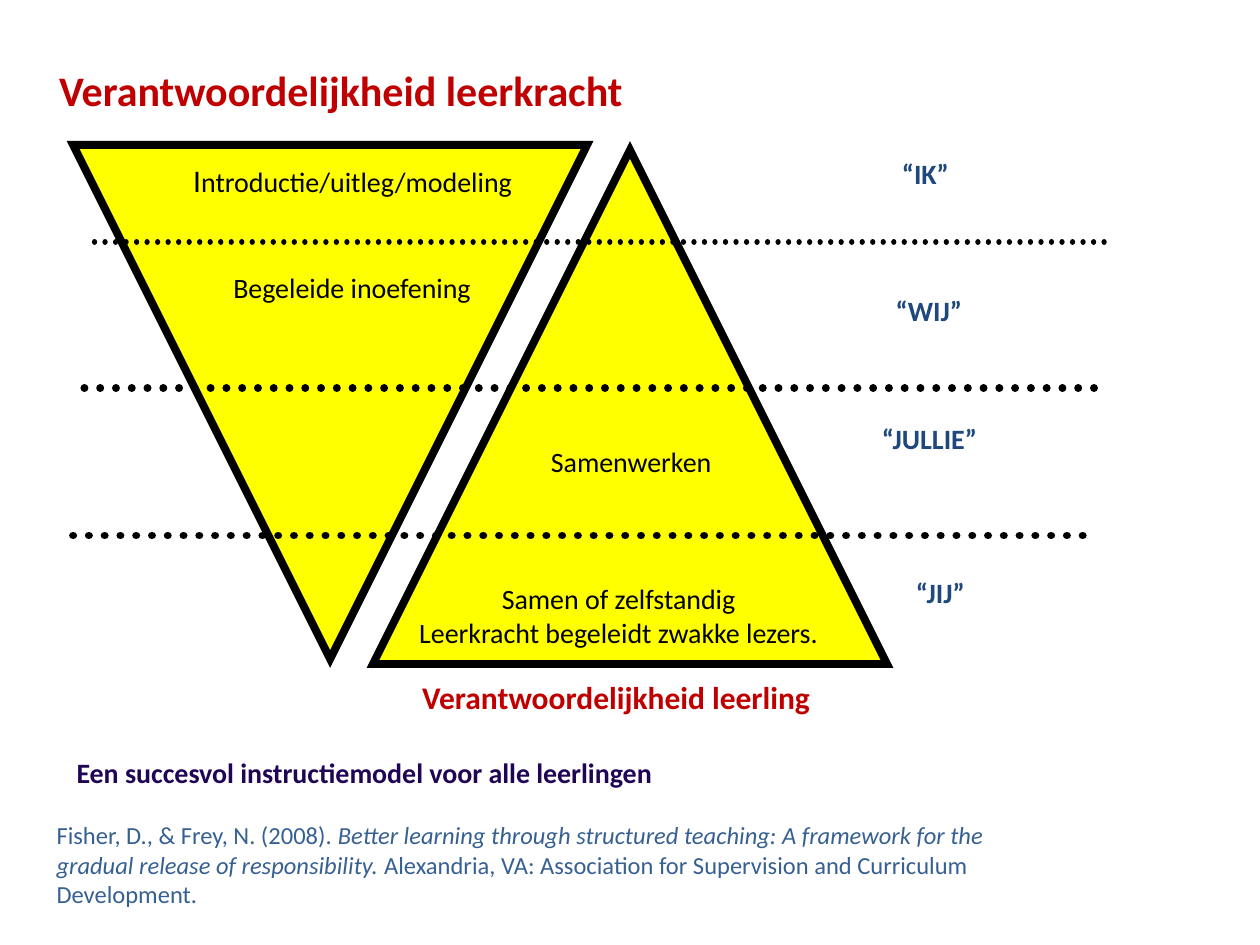
from dataclasses import dataclass

from lxml import etree
from pptx import Presentation
from pptx.dml.color import RGBColor
from pptx.enum.dml import MSO_LINE
from pptx.enum.shapes import MSO_CONNECTOR, MSO_SHAPE
from pptx.enum.text import MSO_AUTO_SIZE, PP_ALIGN
from pptx.oxml.ns import qn
from pptx.util import Inches, Pt

TRIANGLE = MSO_SHAPE.ISOSCELES_TRIANGLE
STRAIGHT = MSO_CONNECTOR.STRAIGHT
DOTTED = MSO_LINE.ROUND_DOT
LEFT, CENTER = PP_ALIGN.LEFT, PP_ALIGN.CENTER


@dataclass(frozen=True)
class Theme:
    font: str = "Calibri"
    black: str = "000000"
    yellow: str = "FFFF00"
    red: str = "C00000"
    blue: str = "1F497D"
    purple: str = "200555"
    citation: str = "376092"
    title_size: int = 24
    subtitle_size: int = 18
    body_size: int = 16
    citation_size: int = 14


THEME = Theme()

presentation = Presentation()
presentation.slide_width = Inches(10)
presentation.slide_height = Inches(7.5)
slide = presentation.slides.add_slide(presentation.slide_layouts[6])
shapes = slide.shapes


def color(value):
    return RGBColor.from_string(value)


def add_text(paragraphs, left, top, width, height, size=THEME.body_size,
             ink=THEME.black, bold=False, align=LEFT, wrap=True, indent=0.1):
    """Each paragraph is a list of (text, overrides) runs; overrides: size, italic."""
    box = shapes.add_textbox(Inches(left), Inches(top), Inches(width), Inches(height))
    frame = box.text_frame
    frame.word_wrap = wrap
    frame.auto_size = MSO_AUTO_SIZE.SHAPE_TO_FIT_TEXT
    frame.margin_left = Inches(indent)
    for index, runs in enumerate(paragraphs):
        paragraph = frame.add_paragraph() if index else frame.paragraphs[0]
        paragraph.alignment = align
        for text, overrides in runs:
            run = paragraph.add_run()
            run.text = text
            font = run.font
            font.name = THEME.font
            font.size = Pt(overrides.get("size", size))
            font.bold = bold
            font.italic = overrides.get("italic", False)
            font.color.rgb = color(ink)


# Student triangle points up, teacher triangle points down
for left, top, rotation in [(2.96, 1.19, 0), (0.58, 1.15, 180)]:
    triangle = shapes.add_shape(TRIANGLE, Inches(left), Inches(top),
                                Inches(4.08), Inches(4.08))
    triangle.rotation = rotation
    triangle.shadow.inherit = False
    triangle.fill.solid()
    triangle.fill.fore_color.rgb = color(THEME.yellow)
    triangle.line.color.rgb = color(THEME.black)
    triangle.line.width = Pt(4.5)
    outline = triangle.line._get_or_add_ln()
    etree.SubElement(outline, qn("a:miter")).set("lim", "800000")

# Dotted dividers between the four phases
for left, top, weight in [(0.75, 1.92, 3), (0.67, 3.08, 4.5), (0.58, 4.25, 4.5)]:
    divider = shapes.add_connector(STRAIGHT, Inches(left), Inches(top),
                                   Inches(left + 8.08), Inches(top))
    divider.line.color.rgb = color(THEME.black)
    divider.line.width = Pt(weight)
    divider.line.dash_style = DOTTED
    divider.line._get_or_add_ln().set("cap", "rnd")
    etree.SubElement(divider._element.spPr, qn("a:effectLst"))

# Headings
add_text([[("Verantwoordelijkheid leerkracht", {})]], 0.37, 0.46, 6.55, 0.5,
         size=THEME.title_size, ink=THEME.red, bold=True)
add_text([[("Verantwoordelijkheid leerling", {})]], 2.8, 5.33, 6.22, 0.4,
         size=THEME.subtitle_size, ink=THEME.red, bold=True, indent=0.55)

# Phases inside the triangles
add_text([[("I", {"size": THEME.subtitle_size}), ("ntroductie/uitleg/modeling", {})]],
         0.83, 1.23, 3.94, 0.51, align=CENTER)
add_text([[("Begeleide inoefening", {})]], 1.63, 2.1, 2.33, 0.64, align=CENTER)
add_text([[("Samenwerken", {})]], 4.11, 3.48, 1.8, 0.37, align=CENTER, wrap=False)
add_text([[("Samen of zelfstandig", {})], [("Leerkracht begeleidt zwakke lezers.", {})]],
         2.79, 4.57, 4.24, 0.64, align=CENTER, wrap=False)

# Who is at work in each phase
for label, left, top, width in [("“IK”", 7.06, 1.19, 0.58), ("“WIJ”", 7.01, 2.28, 0.89),
                                ("“JULLIE”", 6.9, 3.3, 0.97), ("“JIJ”", 7.17, 4.52, 0.6)]:
    add_text([[(label, {})]], left, top, width, 0.37,
             ink=THEME.blue, bold=True, wrap=False)

# Conclusion and citation
add_text([[("Een succesvol instructiemodel voor alle leerlingen", {})]],
         0.51, 5.95, 7.4, 0.37, ink=THEME.purple, bold=True)
add_text([[("Fisher, D., & Frey, N. (2008). ", {}),
           ("Better learning through structured teaching: A framework for the "
            "gradual release of responsibility. ", {"italic": True}),
           ("Alexandria, VA: Association for Supervision and Curriculum "
            "Development.", {})]],
         0.35, 6.46, 7.81, 1.04, size=THEME.citation_size, ink=THEME.citation)

presentation.save("out.pptx")
